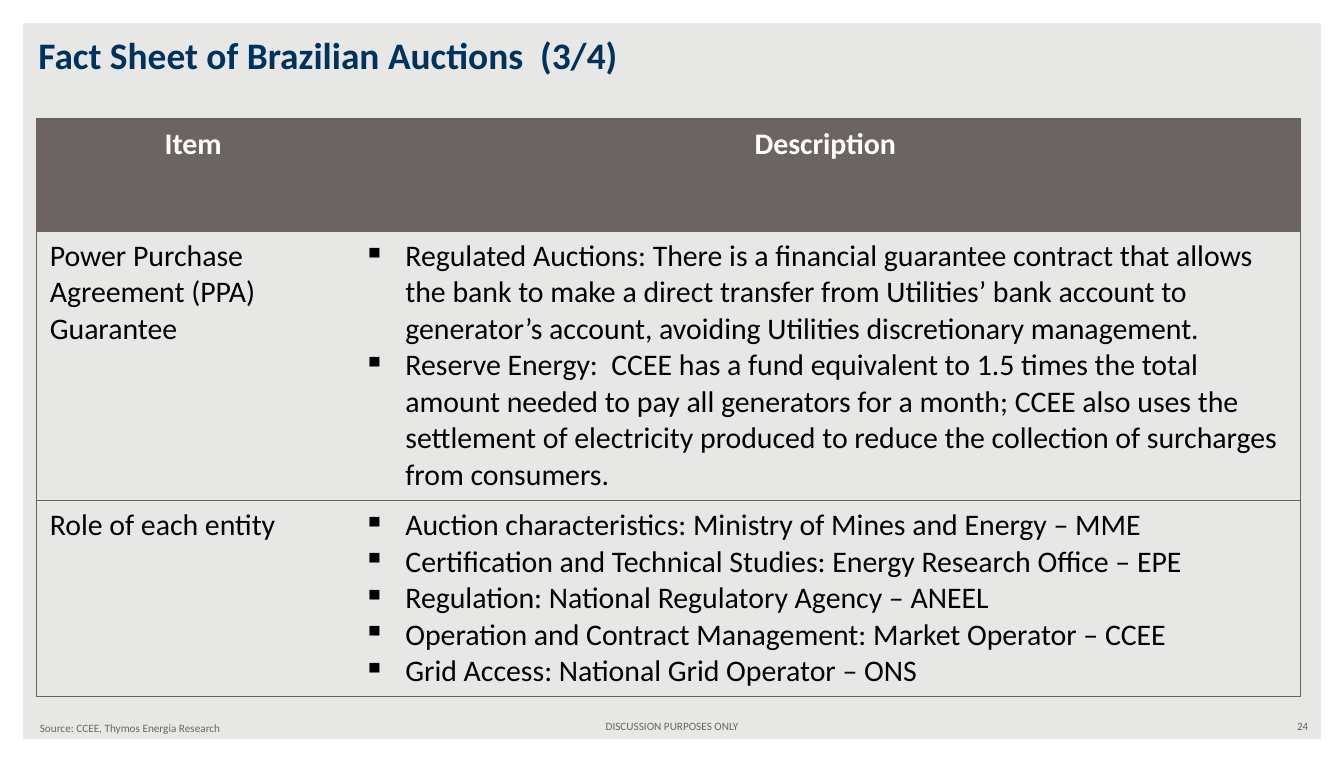
"""Build the fact sheet slide on Brazilian auctions."""
from dataclasses import dataclass

from lxml.etree import SubElement
from pptx import Presentation
from pptx.dml.color import RGBColor
from pptx.enum.shapes import MSO_SHAPE
from pptx.enum.text import MSO_ANCHOR, PP_ALIGN
from pptx.oxml import parse_xml
from pptx.oxml.ns import nsdecls, qn
from pptx.slide import Slide
from pptx.table import _Cell
from pptx.text.text import _Paragraph
from pptx.util import Pt


@dataclass(frozen=True)
class Theme:
    font: str = "Calibri"
    back: str = "E7E7E5"
    white: str = "FFFFFF"
    navy: str = "00335C"
    black: str = "000000"
    taupe: str = "6C6463"
    rule: str = "6A6261"
    title: int = 20
    body: int = 16
    foot: int = 6
    line: float = 0.75


@dataclass(frozen=True)
class Label:
    text: str
    box: tuple[int, int, int, int]
    size: int
    color: str
    align: PP_ALIGN = PP_ALIGN.LEFT
    anchor: MSO_ANCHOR = MSO_ANCHOR.MIDDLE
    bold: bool = False


@dataclass(frozen=True)
class Row:
    item: str
    points: tuple[str, ...]
    height: int
    head: bool = False


THEME = Theme()
SCALE = 9525
WIDTH, HEIGHT = 960, 544
COLS = (224, 679)
TABLE_LEFT, TABLE_TOP = 26, 85
INDENT = 30

LABELS = (
    Label("DISCUSSION PURPOSES ONLY", (328, 509, 304, 19), THEME.foot, THEME.taupe, PP_ALIGN.CENTER),
    Label("24", (720, 509, 224, 19), THEME.foot, THEME.taupe, PP_ALIGN.RIGHT),
    Label("Source: CCEE, Thymos Energia Research", (19, 510, 304, 19), THEME.foot, THEME.taupe),
    Label("Fact Sheet of Brazilian Auctions  (3/4)", (18, 18, 925, 42), THEME.title, THEME.navy,
          anchor=MSO_ANCHOR.BOTTOM, bold=True),
)

ROWS = (
    Row("Item", ("Description",), 80, True),
    Row("Power Purchase Agreement (PPA) Guarantee", (
        "Regulated Auctions: There is a financial guarantee contract that allows the bank to make "
        "a direct transfer from Utilities’ bank account to generator’s account, avoiding Utilities "
        "discretionary management.",
        "Reserve Energy:  CCEE has a fund equivalent to 1.5 times the total amount needed to pay "
        "all generators for a month; CCEE also uses the settlement of electricity produced to "
        "reduce the collection of surcharges from consumers.",
    ), 188),
    Row("Role of each entity", (
        "Auction characteristics: Ministry of Mines and Energy – MME",
        "Certification and Technical Studies: Energy Research Office – EPE",
        "Regulation: National Regulatory Agency – ANEEL",
        "Operation and Contract Management: Market Operator – CCEE",
        "Grid Access: National Grid Operator – ONS",
    ), 138),
)


def px(count: int) -> int:
    return count * SCALE


def add_run(para: _Paragraph, text: str, size: int, color: str, bold: bool = False) -> None:
    run = para.add_run()
    run.text = text
    run.font.name = THEME.font
    run.font.size = Pt(size)
    run.font.bold = bold
    run.font.color.rgb = RGBColor.from_string(color)


def add_frame(slide: Slide) -> None:
    frame = slide.shapes.add_shape(MSO_SHAPE.FRAME, 0, 0, px(WIDTH), px(HEIGHT))
    frame.adjustments[0] = 0.03
    frame.shadow.inherit = False
    frame.fill.solid()
    frame.fill.fore_color.rgb = RGBColor.from_string(THEME.white)
    frame.line.fill.background()


def add_label(slide: Slide, label: Label) -> None:
    frame = slide.shapes.add_textbox(*map(px, label.box)).text_frame
    frame.word_wrap = True
    frame.vertical_anchor = label.anchor
    para = frame.paragraphs[0]
    para.alignment = label.align
    add_run(para, label.text, label.size, label.color, label.bold)


def add_bullet(para: _Paragraph) -> None:
    props = para._p.get_or_add_pPr()
    props.set("marL", str(px(INDENT)))
    props.set("indent", str(-px(INDENT)))
    SubElement(props, qn("a:buChar")).set("char", "▪")


def set_edges(cell: _Cell, first: bool) -> None:
    props = cell._tc.get_or_add_tcPr()
    shown = {"L": first, "R": not first, "T": True, "B": True}
    for order, (side, drawn) in enumerate(shown.items()):
        fill = f'<a:solidFill><a:srgbClr val="{THEME.rule}"/></a:solidFill>' if drawn else "<a:noFill/>"
        edge = f'<a:ln{side} {nsdecls("a")} w="{Pt(THEME.line)}">{fill}</a:ln{side}>'
        props.insert(order, parse_xml(edge))


def fill_cell(cell: _Cell, texts: tuple[str, ...], head: bool, first: bool) -> None:
    if head:
        cell.fill.solid()
        cell.fill.fore_color.rgb = RGBColor.from_string(THEME.taupe)
    else:
        cell.fill.background()
    set_edges(cell, first)
    frame = cell.text_frame
    for order, text in enumerate(texts):
        para = frame.add_paragraph() if order else frame.paragraphs[0]
        if not head and not first:
            add_bullet(para)
        para.alignment = PP_ALIGN.CENTER if head else PP_ALIGN.LEFT
        add_run(para, text, THEME.body, THEME.white if head else THEME.black, head)


def add_facts(slide: Slide) -> None:
    tall = sum(row.height for row in ROWS)
    area = map(px, (TABLE_LEFT, TABLE_TOP, sum(COLS), tall))
    table = slide.shapes.add_table(len(ROWS), len(COLS), *area).table
    table.horz_banding = False
    for col, width in zip(table.columns, COLS):
        col.width = px(width)
    for order, row in enumerate(ROWS):
        table.rows[order].height = px(row.height)
        fill_cell(table.cell(order, 0), (row.item,), row.head, True)
        fill_cell(table.cell(order, 1), row.points, row.head, False)


def main() -> None:
    deck = Presentation()
    deck.slide_width, deck.slide_height = px(WIDTH), px(HEIGHT)
    slide = deck.slides.add_slide(deck.slide_layouts[6])
    slide.background.fill.solid()
    slide.background.fill.fore_color.rgb = RGBColor.from_string(THEME.back)
    add_frame(slide)
    add_facts(slide)
    for label in LABELS:
        add_label(slide, label)
    deck.save("out.pptx")


if __name__ == "__main__":
    main()
